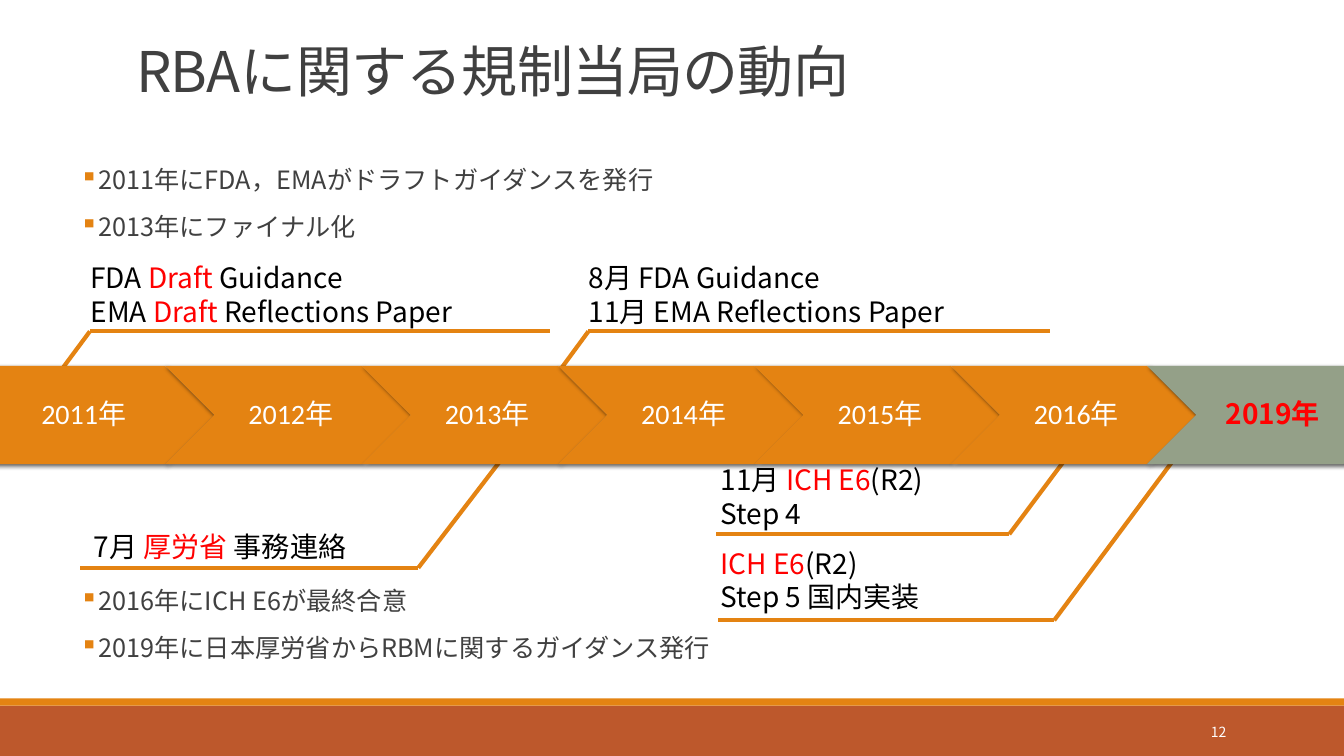
from lxml.etree import SubElement
from pptx import Presentation
from pptx.dml.color import RGBColor
from pptx.enum.shapes import MSO_CONNECTOR, MSO_SHAPE
from pptx.enum.text import MSO_ANCHOR, MSO_AUTO_SIZE, PP_ALIGN
from pptx.oxml.ns import qn
from pptx.util import Inches, Pt

ORANGE = RGBColor(0xE4, 0x83, 0x12)
RUST = RGBColor(0xBD, 0x58, 0x2C)
SAGE = RGBColor(0x94, 0xA0, 0x88)
GREY = RGBColor(0x40, 0x40, 0x40)
BLACK = RGBColor(0, 0, 0)
RED = RGBColor(0xFF, 0, 0)
WHITE = RGBColor(0xFF, 0xFF, 0xFF)
SANS, LATIN = "Noto Sans CJK JP", "Calibri"
COLS, ROWS = 160, 90

FLAGS = [
    (["FDA |Draft| Guidance", "EMA |Draft| Reflections Paper"], (9.6, 30.48, 48.24, 9.24),
     [(5.52, 46.44), (10.7, 39.45), (65.5, 39.45)]),
    (["8月 FDA Guidance", "11月 EMA Reflections Paper"], (68.88, 30.48, 47.52, 9.24),
     [(64.92, 46.44), (70.05, 39.45), (125.05, 39.45)]),
    (["7月 |厚労省| 事務連絡"], (9.96, 62.4, 33.72, 5.28),
     [(64.92, 47.88), (49.8, 67.6), (9.5, 67.6)]),
    (["11月 |ICH E6|(R2)", "Step 4"], (84.6, 54.48, 31, 9.24),
     [(130.2, 50.16), (120.15, 63.6), (85.3, 63.6)]),
    (["|ICH E6|(R2)", "Step 5 国内実装"], (84.6, 64.44, 27.6, 9.24),
     [(142.68, 50.76), (125.5, 73.85), (85.5, 73.85)]),
]
NOTES = [
    (19.3, ["2011年にFDA，EMAがドラフトガイダンスを発行", "2013年にファイナル化"]),
    (69.45, ["2016年にICH E6が最終合意", "2019年に日本厚労省からRBMに関するガイダンス発行"]),
]
YEARS = [2011, 2012, 2013, 2014, 2015, 2016, 2019]


class Sheet:
    """Holds the slide, its grid and its text style."""

    def __init__(self, deck):
        """Add a title-only slide and size the grid cells."""
        self.slide = deck.slides.add_slide(deck.slide_layouts[5])
        self.shapes = self.slide.shapes
        self.col = deck.slide_width / COLS
        self.row = deck.slide_height / ROWS

    def place(self, left, top, width, height):
        """Turn grid cells into lengths."""
        return (round(left * self.col), round(top * self.row),
                round(width * self.col), round(height * self.row))

    def font(self, run, size, color, face=SANS, bold=False):
        """Style one run for both scripts."""
        run.font.size, run.font.name, run.font.bold = Pt(size), face, bold
        run.font.color.rgb = color
        SubElement(run.font._element, qn("a:ea")).set("typeface", SANS)

    def fill(self, frame, lines, size, color, pitch):
        """Fill a frame; parts between bars turn red."""
        frame.text = "\n".join(lines)
        for para, line in zip(frame.paragraphs, lines):
            para.text = ""
            para.line_spacing = Pt(pitch)
            for i, part in enumerate(line.split("|")):
                if part:
                    run = para.add_run()
                    run.text = part
                    self.font(run, size, RED if i % 2 else color)

    def title(self, text):
        """Move and format the title."""
        box = self.shapes.title
        box.left, box.top, box.width, box.height = self.place(15, 0, 132, 12.96)
        frame = box.text_frame
        self.fill(frame, [text], 40, GREY, 41)
        frame.auto_size = MSO_AUTO_SIZE.NONE
        frame.vertical_anchor = MSO_ANCHOR.BOTTOM
        para = frame.paragraphs[0]
        para.alignment = PP_ALIGN.LEFT
        para.runs[0].font._element.set("spc", "-50")

    def text(self, spot, lines, size, color, pitch, wrap=False):
        """Add a text box and return its frame."""
        frame = self.shapes.add_textbox(*self.place(*spot)).text_frame
        frame.word_wrap = wrap
        self.fill(frame, lines, size, color, pitch)
        return frame

    def notes(self, top, lines):
        """Add a block of bullet lines."""
        frame = self.text((9.5, top, 139.4, 11.8), lines, 18, GREY, 19.5, True)
        frame.margin_left = frame.margin_right = 0
        for para in frame.paragraphs:
            para.space_before, para.space_after = Pt(12), Pt(2)
            props = para._p.get_or_add_pPr()
            props.set("marL", str(Inches(0.1)))
            props.set("indent", str(-Inches(0.1)))
            tint = SubElement(SubElement(props, qn("a:buClr")), qn("a:srgbClr"))
            tint.set("val", str(ORANGE))
            SubElement(props, qn("a:buChar")).set("char", "▪")

    def line(self, start, end):
        """Draw a thick orange line."""
        x, y, x2, y2 = self.place(*start, *end)
        line = self.shapes.add_connector(MSO_CONNECTOR.STRAIGHT, x, y, x2, y2)
        line.line.color.rgb, line.line.width = ORANGE, Pt(3)
        SubElement(line._element.spPr, qn("a:effectLst"))

    def flag(self, lines, spot, points):
        """Add a label with its bent leader."""
        for start, end in zip(points, points[1:]):
            self.line(start, end)
        self.text(spot, lines, 20, BLACK, 24)

    def block(self, kind, spot, color):
        """Add a plain filled shape."""
        shape = self.shapes.add_shape(kind, *self.place(*spot))
        shape.shadow.inherit = False
        shape.fill.solid()
        shape.fill.fore_color.rgb = color
        shape.line.fill.background()
        return shape

    def shade(self, shape):
        """Give a shape a soft shadow."""
        glow = SubElement(shape._element.spPr.find(qn("a:effectLst")), qn("a:outerShdw"))
        for key, val in (("blurRad", Pt(3)), ("dist", Pt(2)), ("dir", 45 * 60000)):
            glow.set(key, str(val))
        tint = SubElement(glow, qn("a:srgbClr"))
        tint.set("val", str(BLACK))
        SubElement(tint, qn("a:alpha")).set("val", "60000")

    def year(self, i, year):
        """Add one step of the time band."""
        last = i == len(YEARS) - 1
        kind = MSO_SHAPE.CHEVRON if i else MSO_SHAPE.PENTAGON
        step = self.block(kind, (-3.72 + 23.38 * i, 43.56, 29.22, 11.69), SAGE if last else ORANGE)
        step.adjustments[0] = 0.5
        self.shade(step)
        frame = step.text_frame
        frame.margin_left, frame.margin_right = Inches(0.09 if i else 0.12), Inches(0.03)
        frame.vertical_anchor = MSO_ANCHOR.MIDDLE
        para = frame.paragraphs[0]
        para.text = f"{year}年"
        para.alignment = PP_ALIGN.CENTER
        para.line_spacing = 0.9
        self.font(para.runs[0], 20, RED if last else WHITE, SANS if last else LATIN, last)


def main():
    """Build and save the slide."""
    deck = Presentation()
    deck.slide_width, deck.slide_height = Inches(13.33), Inches(7.5)
    sheet = Sheet(deck)
    sheet.block(MSO_SHAPE.RECTANGLE, (0, 84, COLS, 6), RUST)
    sheet.block(MSO_SHAPE.RECTANGLE, (0, 83.16, COLS, 0.84), ORANGE)
    sheet.title("RBAに関する規制当局の動向")
    for top, lines in NOTES:
        sheet.notes(top, lines)
    for lines, spot, points in FLAGS:
        sheet.flag(lines, spot, points)
    for i, year in enumerate(YEARS):
        sheet.year(i, year)
    page = sheet.text((130, 84.7, 17.16, 4.8), ["12"], 10, WHITE, 12, True)
    page.vertical_anchor = MSO_ANCHOR.MIDDLE
    page.paragraphs[0].alignment = PP_ALIGN.RIGHT
    deck.save("out.pptx")


if __name__ == "__main__":
    main()
